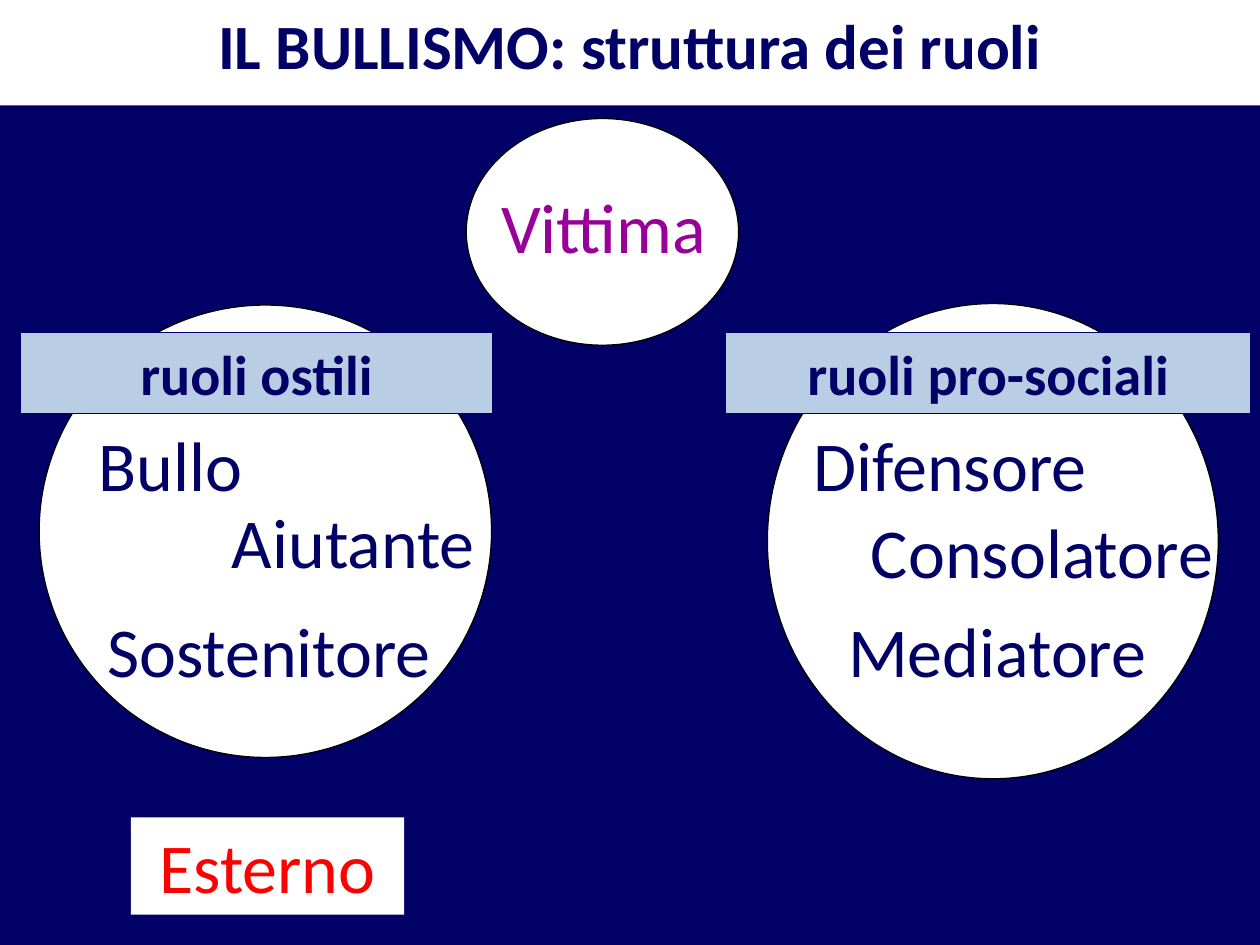
"""Build the slide on the structure of roles in bullying."""
from pptx import Presentation
from pptx.dml.color import RGBColor as Rgb
from pptx.enum.shapes import MSO_SHAPE as Kind
from pptx.enum.text import MSO_ANCHOR as Anchor, MSO_AUTO_SIZE as Fit, PP_ALIGN as Align
from pptx.util import Cm, Pt

THEME = {
    "font": "Calibri",
    "navy": "000066", "white": "FFFFFF", "black": "000000",
    "sky": "B9CDE5", "plum": "990099", "red": "FF0000",
    "title": 36, "band": 32, "role": 40, "line": 0.75,
}
SIZE = (25.4, 19.05)
TITLE = ("IL BULLISMO: struttura dei ruoli", 1.8)
DISCS = [(9.4, 2.39, 5.49, 4.57), (0.79, 6.15, 9.12, 9.12), (15.47, 6.12, 9.09, 9.58)]
BANDS = [("ruoli ostili", 0.41, 9.53), ("ruoli pro-sociali", 14.63, 10.59)]
BAND_TOP, BAND_HIGH = 6.71, 1.63
ROLES = [
    ("Vittima", 9.73, 3.58, 4.88, "plum"),
    ("Bullo", 1.32, 8.36, 4.24, "navy"),
    ("Aiutante", 4.37, 9.93, 5.51, "navy"),
    ("Sostenitore", 1.52, 12.12, 7.8, "navy"),
    ("Difensore", 16.08, 8.36, 6.15, "navy"),
    ("Consolatore", 17.27, 10.13, 7.47, "navy"),
    ("Mediatore", 16.81, 12.12, 6.58, "navy"),
]
ROLE_HIGH = 1.96
OUTER = ("Esterno", 2.64, 16.48, 5.51, ROLE_HIGH)


def tint(name):
    return Rgb.from_string(THEME[name])


def put(item, values):
    for name, value in values.items():
        setattr(item, name, value)


def paint(shape, fill, line=None):
    shape.fill.solid()
    shape.fill.fore_color.rgb = tint(fill)
    if line:
        shape.line.color.rgb = tint(line)
        shape.line.width = Pt(THEME["line"])
    else:
        shape.line.fill.background()


def write(shape, text, size, color, bold=False, wrap=True):
    frame = shape.text_frame
    frame.text = text
    put(frame, {
        "word_wrap": wrap, "auto_size": Fit.SHAPE_TO_FIT_TEXT,
        "vertical_anchor": Anchor.TOP,
        "margin_left": Cm(0.25), "margin_right": Cm(0.25),
        "margin_top": Cm(0.13), "margin_bottom": Cm(0.13),
    })
    para = frame.paragraphs[0]
    put(para, {"alignment": Align.CENTER, "space_before": Pt(0)})
    font = para.runs[0].font
    put(font, {"name": THEME["font"], "size": Pt(THEME[size]), "bold": bold})
    font.color.rgb = tint(color)


def draw(slide, kind, box, fill, line=None):
    shape = slide.shapes.add_shape(kind, *map(Cm, box))
    shape.shadow.inherit = False
    paint(shape, fill, line)
    return shape


def main():
    deck = Presentation()
    deck.slide_width, deck.slide_height = map(Cm, SIZE)
    slide = deck.slides.add_slide(deck.slide_layouts[5])
    back = slide.background.fill
    back.solid()
    back.fore_color.rgb = tint("navy")

    text, high = TITLE
    head = slide.shapes.title
    put(head, {"left": 0, "top": 0, "width": Cm(SIZE[0]), "height": Cm(high)})
    paint(head, "white")
    write(head, text, "title", "navy", True)

    for box in DISCS:
        draw(slide, Kind.OVAL, box, "white", "black")
    for text, left, wide in BANDS:
        box = (left, BAND_TOP, wide, BAND_HIGH)
        band = draw(slide, Kind.RECTANGLE, box, "sky", "navy")
        write(band, text, "band", "navy", True)
    for text, left, top, wide, color in ROLES:
        role = slide.shapes.add_textbox(*map(Cm, (left, top, wide, ROLE_HIGH)))
        write(role, text, "role", color, wrap=False)

    text, *box = OUTER
    write(draw(slide, Kind.RECTANGLE, box, "white"), text, "role", "red")
    deck.save("out.pptx")


if __name__ == "__main__":
    main()
